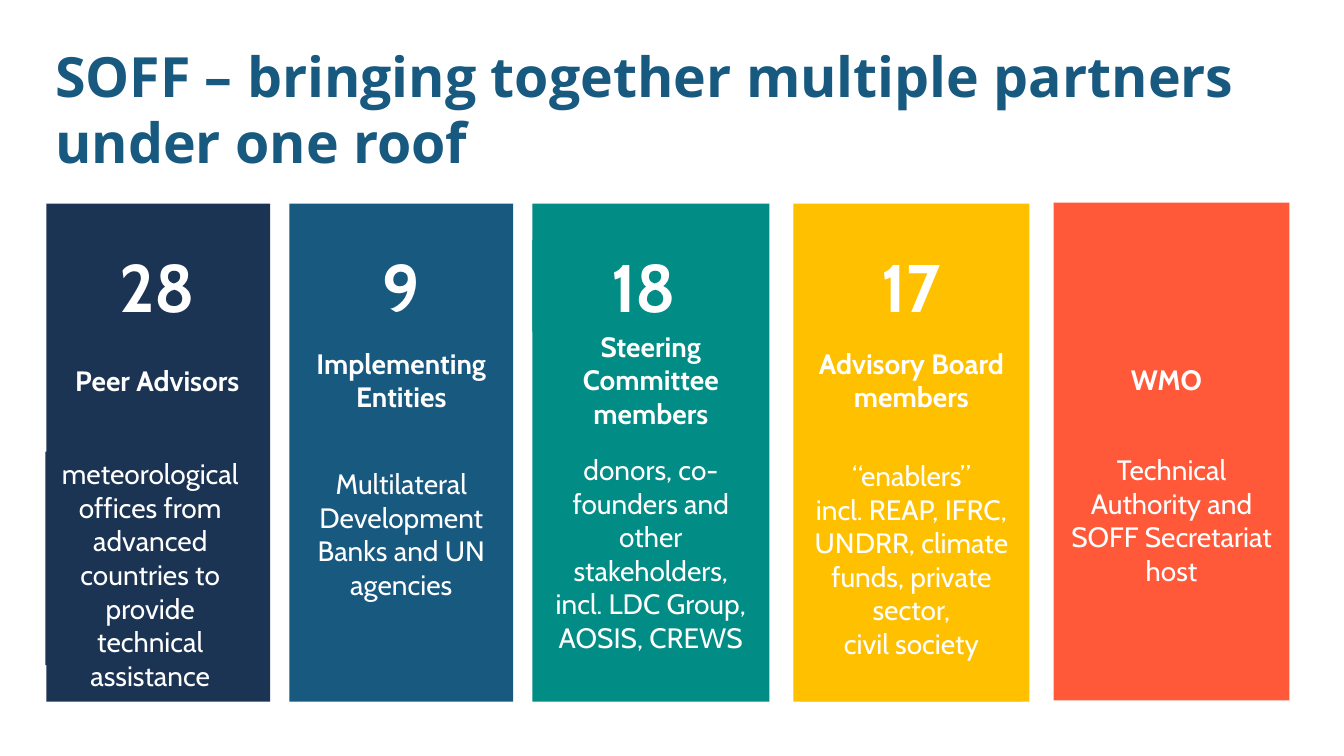
from dataclasses import dataclass

from pptx import Presentation
from pptx.dml.color import RGBColor
from pptx.enum.shapes import MSO_SHAPE
from pptx.enum.text import MSO_ANCHOR, PP_ALIGN
from pptx.util import Inches, Pt


@dataclass(frozen=True)
class Theme:
    navy: str = "1C3454"
    blue: str = "185980"
    teal: str = "018C85"
    gold: str = "FFC000"
    coral: str = "FF593A"
    white: str = "FFFFFF"
    head: str = "Open Sans"
    body: str = "Cabin"
    title: float = 39.6
    count: float = 48
    text: float = 20


theme = Theme()


def block(shapes, box, fill):
    """Add a plain filled rectangle."""
    shape = shapes.add_shape(MSO_SHAPE.RECTANGLE, *map(Inches, box))
    shape.shadow.inherit = False
    shape.fill.solid()
    shape.fill.fore_color.rgb = RGBColor.from_string(fill)
    shape.line.fill.background()
    return shape


def write(shape, lines, size, bold=False, font=theme.body, color=theme.white,
          align=PP_ALIGN.CENTER, anchor=MSO_ANCHOR.TOP):
    """Fill a shape with one paragraph a line; a newline breaks within it."""
    frame = shape.text_frame
    frame.word_wrap = True
    frame.vertical_anchor = anchor
    for i, line in enumerate(lines):
        para = frame.paragraphs[0] if i == 0 else frame.add_paragraph()
        para.alignment = align
        for j, part in enumerate(line.split("\n")):
            if j:
                para.add_line_break()
            run = para.add_run()
            run.text = part
            run.font.size = Pt(size)
            run.font.name = font
            run.font.bold = bold
            run.font.color.rgb = RGBColor.from_string(color)


deck = Presentation()
deck.slide_width = Inches(13.33)
deck.slide_height = Inches(7.5)
slide = deck.slides.add_slide(deck.slide_layouts[6])

title = slide.shapes.add_textbox(Inches(0.45), Inches(0.45), Inches(12.43), Inches(1.25))
write(title, ["SOFF – bringing together multiple partners under one roof"],
      theme.title, True, theme.head, theme.blue, PP_ALIGN.LEFT, MSO_ANCHOR.MIDDLE)

# colour, left, top, width; count, left; label, left, rows; body left, top, height, text
columns = [
    (theme.navy, 0.46, 2.02, 2.22, "28", 0.52, "Peer Advisors", 0.52, 1, 0.45, 4.48, 2.12,
     ["meteorological offices from advanced countries to provide technical assistance"]),
    (theme.blue, 2.87, 2.02, 2.22, "9", 2.94, "Implementing Entities", 2.94, 2,
     2.94, 4.58, 1.45, ["Multilateral Development Banks and UN agencies"]),
    (theme.teal, 5.28, 2.02, 2.35, "18", 5.28, "Steering Committee members", 5.35, 3,
     5.35, 4.44, 2.46,
     ["donors, co-founders and other stakeholders,", "incl. LDC Group, AOSIS, CREWS"]),
    (theme.gold, 7.87, 2.02, 2.34, "17", 7.94, "Advisory Board members", 7.94, 2,
     7.94, 4.5, 2.46,
     ["“enablers”",
      "incl. REAP, IFRC, UNDRR, climate funds, private sector,\ncivil society"]),
    (theme.coral, 10.45, 2.01, 2.34, None, None, "WMO ", 10.5, 1, 10.52, 4.44, 1.78,
     ["Technical Authority and SOFF Secretariat host"]),
]

for (color, left, top, width, count, count_x, label, label_x, rows,
     body_x, body_y, body_h, body) in columns:
    shapes = slide.shapes.add_group_shape().shapes
    block(shapes, (left, top, width, 4.94), color)
    inner = width - 0.14
    high = 0.1 + rows * 0.335
    spot = block(shapes, (label_x, top + 1.75 - high / 2, inner, high), color)
    write(spot, [label], theme.text, True)
    if count:
        spot = block(shapes, (count_x, top + 0.36, inner, 0.91), color)
        write(spot, [count], theme.count, True)
    spot = block(shapes, (body_x, body_y, inner, body_h), color)
    write(spot, body, theme.text)

deck.save("out.pptx")
